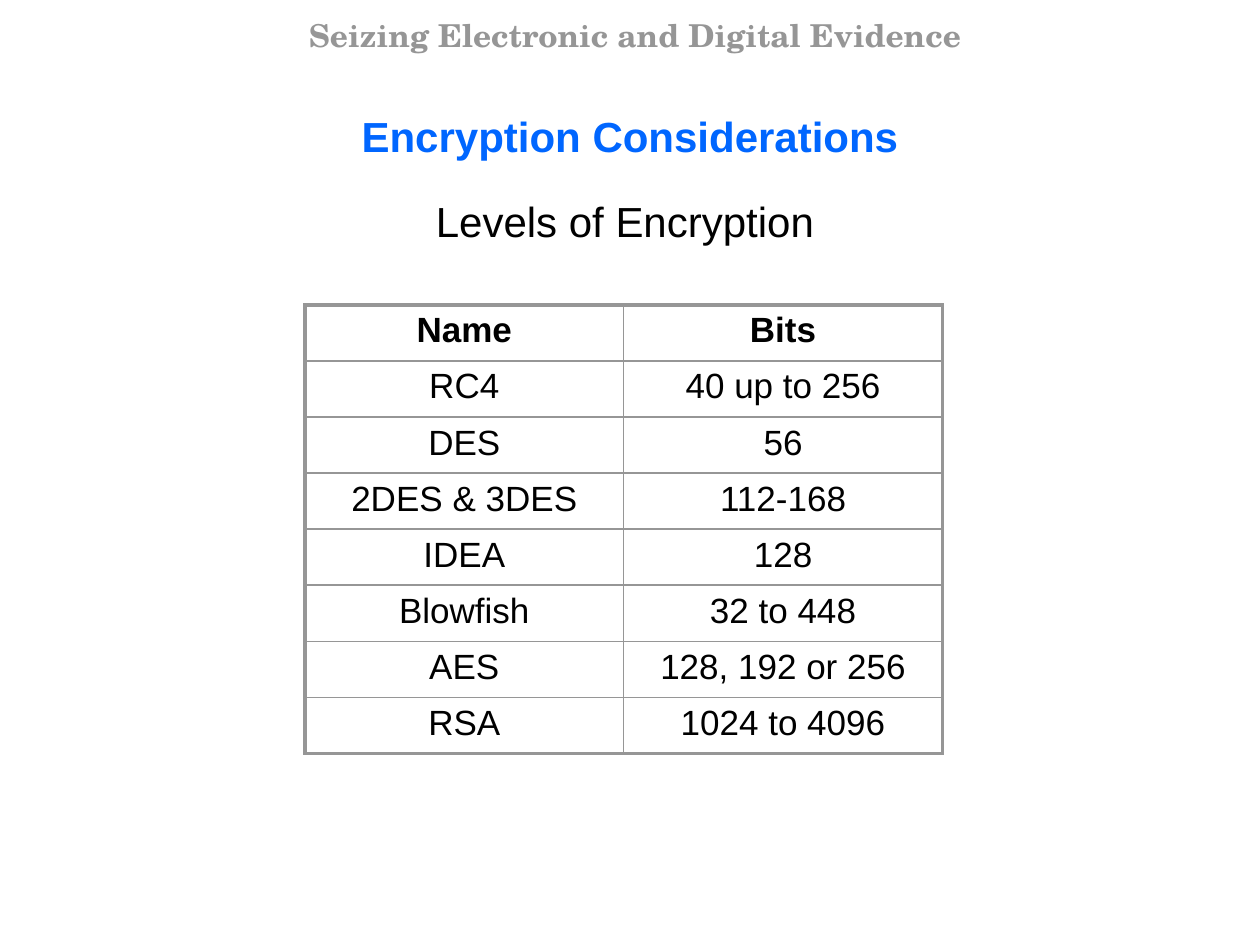
from dataclasses import dataclass

from lxml import etree
from pptx import Presentation
from pptx.dml.color import RGBColor
from pptx.enum.text import MSO_ANCHOR, MSO_AUTO_SIZE, PP_ALIGN
from pptx.oxml.ns import qn
from pptx.util import Inches, Pt

CENTER = PP_ALIGN.CENTER
TOP = MSO_ANCHOR.TOP
NO_AUTOFIT = MSO_AUTO_SIZE.NONE
TITLE_ONLY = 5


@dataclass(frozen=True)
class TextStyle:
    size: int
    color: str
    bold: bool = False
    font: str = "Arial"


@dataclass(frozen=True)
class Theme:
    banner: TextStyle = TextStyle(18, "969696", True, "TeX Gyre Schola")
    title: TextStyle = TextStyle(24, "0066FF", True)
    subtitle: TextStyle = TextStyle(24, "000000")
    header: TextStyle = TextStyle(20, "000000", True)
    body: TextStyle = TextStyle(20, "000000")
    border: str = "969696"
    outer_width: float = 2.25
    inner_width: float = 1


@dataclass(frozen=True)
class Box:
    left: float
    top: float
    width: float
    height: float

    def lengths(self):
        return [Inches(n) for n in (self.left, self.top, self.width, self.height)]


THEME = Theme()
BANNER_BOX = Box(0.33, 0.08, 9.42, 0.4)
TITLE_BOX = Box(0, 0.83, 10, 0.5)
SUBTITLE_BOX = Box(1.67, 1.5, 6.58, 0.5)
TABLE_BOX = Box(2.42, 2.42, 5.06, 3.56)

ENCRYPTION_LEVELS = [
    ("Name", "Bits"),
    ("RC4", "40 up to 256"),
    ("DES", "56"),
    ("2DES & 3DES", "112-168"),
    ("IDEA", "128"),
    ("Blowfish", "32 to 448"),
    ("AES", "128, 192 or 256"),
    ("RSA", "1024 to 4096"),
]


def write(text_frame, text: str, style: TextStyle) -> None:
    text_frame.text = text
    paragraph = text_frame.paragraphs[0]
    paragraph.alignment = CENTER
    paragraph.space_before = Pt(0)
    font = paragraph.font
    font.name, font.size, font.bold = style.font, Pt(style.size), style.bold
    font.color.rgb = RGBColor.from_string(style.color)


def place_text(shape, box: Box, text: str, style: TextStyle) -> None:
    shape.left, shape.top, shape.width, shape.height = box.lengths()
    text_frame = shape.text_frame
    text_frame.word_wrap = True
    text_frame.auto_size = NO_AUTOFIT
    text_frame.vertical_anchor = TOP
    write(text_frame, text, style)


def add_text(slide, box: Box, text: str, style: TextStyle) -> None:
    place_text(slide.shapes.add_textbox(*box.lengths()), box, text, style)


def set_borders(cell, outer_sides: dict[str, bool]) -> None:
    properties = cell._tc.get_or_add_tcPr()
    for side, is_outer in outer_sides.items():
        width = THEME.outer_width if is_outer else THEME.inner_width
        line = etree.SubElement(properties, qn(f"a:ln{side}"), w=str(Pt(width)))
        fill = etree.SubElement(line, qn("a:solidFill"))
        etree.SubElement(fill, qn("a:srgbClr"), val=THEME.border)


def add_grid(slide, box: Box, rows: list[tuple[str, ...]]) -> None:
    row_count, column_count = len(rows), len(rows[0])
    table = slide.shapes.add_table(row_count, column_count, *box.lengths()).table
    table.first_row = table.horz_banding = False
    for row, values in enumerate(rows):
        for column, value in enumerate(values):
            cell = table.cell(row, column)
            write(cell.text_frame, value, THEME.body if row else THEME.header)
            # The frame is heavier than the inner rules
            set_borders(cell, {
                "L": column == 0,
                "R": column == column_count - 1,
                "T": row == 0,
                "B": row == row_count - 1,
            })
            cell.fill.background()


def main() -> None:
    presentation = Presentation()
    presentation.slide_width, presentation.slide_height = Inches(10), Inches(7.5)
    slide = presentation.slides.add_slide(presentation.slide_layouts[TITLE_ONLY])

    # Headings
    add_text(slide, BANNER_BOX, "Seizing Electronic and Digital Evidence", THEME.banner)
    place_text(slide.shapes.title, TITLE_BOX, "Encryption Considerations", THEME.title)
    add_text(slide, SUBTITLE_BOX, "Levels of Encryption", THEME.subtitle)

    # Key lengths by cipher
    add_grid(slide, TABLE_BOX, ENCRYPTION_LEVELS)

    presentation.save("out.pptx")


if __name__ == "__main__":
    main()
